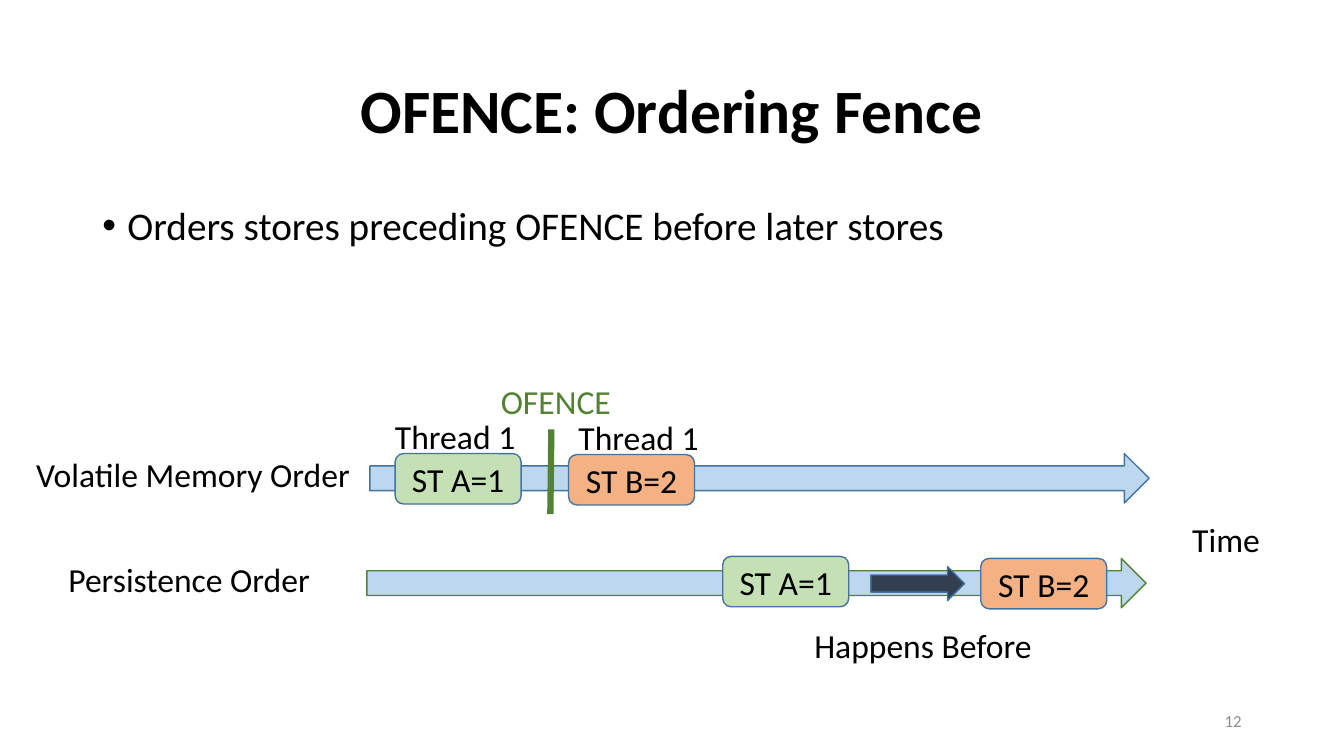
from lxml import etree
from pptx import Presentation
from pptx.dml.color import RGBColor
from pptx.enum.shapes import MSO_CONNECTOR, MSO_SHAPE
from pptx.enum.text import MSO_ANCHOR, PP_ALIGN
from pptx.oxml.ns import qn
from pptx.util import Pt

ARROW, ROUND = MSO_SHAPE.RIGHT_ARROW, MSO_SHAPE.ROUNDED_RECTANGLE
LEFT, CENTER, RIGHT = PP_ALIGN.LEFT, PP_ALIGN.CENTER, PP_ALIGN.RIGHT
TOP, MIDDLE = MSO_ANCHOR.TOP, MSO_ANCHOR.MIDDLE

# Content: positions are left, top in points
TITLE = "OFENCE: Ordering Fence"
POINT = "Orders stores preceding OFENCE before later stores"
PAGE = "12"
LANES = [(262.08, 398.88, "green"), (264.24, 324, "edge")]
STORES = [
    ("ST A=1", 282.24, 324, "mint"),
    ("ST A=1", 516.24, 397.44, "mint"),
    ("ST B=2", 406.08, 324.72, "peach"),
    ("ST B=2", 700.56, 398.88, "peach"),
]
LABELS = [
    ("Volatile Memory Order", 18.72, 320.4, "ink"),
    ("Persistence Order", 41.76, 396, "ink"),
    ("Time", 844.56, 367.2, "ink"),
    ("Thread 1", 275.04, 293.76, "ink"),
    ("Thread 1", 406.08, 294.48, "ink"),
    ("OFENCE", 350.64, 268.56, "green"),
    ("Happens Before", 574.56, 442.8, "ink"),
]
FENCE = (393.12, 367.2, 393.84, 306.72)
BEFORE = (622.08, 404.64, 66.96, 24.48)

WIDE, HIGH = 960, 540
LANE = (556.56, 35.28)
STORE = (90, 36)
LABEL = (278.64, 36)
HEAD = (66, 28.8, 828, 104.4)
BODY = (66, 144, 828, 97.92)
FOOT = (678, 500.4, 216, 28.8)
INDENT = 18

THEME = {
    "font": "Calibri",
    "color": {
        "ink": "000000", "gray": "8C8C8C", "sky": "BDD7EE", "edge": "43739E",
        "green": "548235", "mint": "C5E0B4", "peach": "F4B183", "navy": "333F50",
    },
    "size": {"title": 44, "body": 28, "label": 24, "page": 12},
    "line": {"edge": 1, "fence": 4.5},
}


def tint(name):
    return RGBColor.from_string(THEME["color"][name])


def apply(item, **values):
    for name, value in values.items():
        setattr(item, name, value)


def write(shape, text, size, color="ink", align=LEFT, anchor=TOP, bold=False, wrap=True):
    frame = shape.text_frame
    apply(frame, word_wrap=wrap, vertical_anchor=anchor)
    para = frame.paragraphs[0]
    para.alignment = align
    run = para.add_run()
    run.text = text
    apply(run.font, name=THEME["font"], size=Pt(THEME["size"][size]), bold=bold)
    run.font.color.rgb = tint(color)
    return para


def block(slide, kind, box, fill, edge="edge"):
    shape = slide.shapes.add_shape(kind, *map(Pt, box))
    shape.shadow.inherit = False
    shape.fill.solid()
    shape.fill.fore_color.rgb = tint(fill)
    shape.line.color.rgb = tint(edge)
    shape.line.width = Pt(THEME["line"]["edge"])
    return shape


def note(slide, box, *words, **style):
    return write(slide.shapes.add_textbox(*map(Pt, box)), *words, **style)


def head(slide):
    title = slide.shapes.title
    left, top, width, height = map(Pt, HEAD)
    apply(title, left=left, top=top, width=width, height=height)
    write(title, TITLE, "title", align=CENTER, anchor=MIDDLE, bold=True).line_spacing = 0.9


def body(slide):
    para = note(slide, BODY, POINT, "body")
    apply(para, line_spacing=0.9, space_before=Pt(10))
    props = para._p.get_or_add_pPr()
    props.set("marL", str(Pt(INDENT)))
    props.set("indent", str(-Pt(INDENT)))
    etree.SubElement(props, qn("a:buFont")).set("typeface", "Arial")
    etree.SubElement(props, qn("a:buChar")).set("char", "•")


def fence(slide):
    line = slide.shapes.add_connector(MSO_CONNECTOR.STRAIGHT, *map(Pt, FENCE))
    line.line.color.rgb = tint("green")
    line.line.width = Pt(THEME["line"]["fence"])
    etree.SubElement(line._element.spPr, qn("a:effectLst"))


def main():
    deck = Presentation()
    apply(deck, slide_width=Pt(WIDE), slide_height=Pt(HIGH))
    slide = deck.slides.add_slide(deck.slide_layouts[5])
    head(slide)
    body(slide)
    for left, top, edge in LANES:
        block(slide, ARROW, (left, top, *LANE), "sky", edge)
    for text, left, top, fill in STORES:
        shape = block(slide, ROUND, (left, top, *STORE), fill)
        write(shape, text, "label", align=CENTER, anchor=MIDDLE, wrap=False)
    for text, left, top, color in LABELS:
        width = min(LABEL[0], WIDE - left)
        note(slide, (left, top, width, LABEL[1]), text, "label", color)
    fence(slide)
    block(slide, ARROW, BEFORE, "navy")
    note(slide, FOOT, PAGE, "page", "gray", align=RIGHT, anchor=MIDDLE)
    deck.save("out.pptx")


if __name__ == "__main__":
    main()
